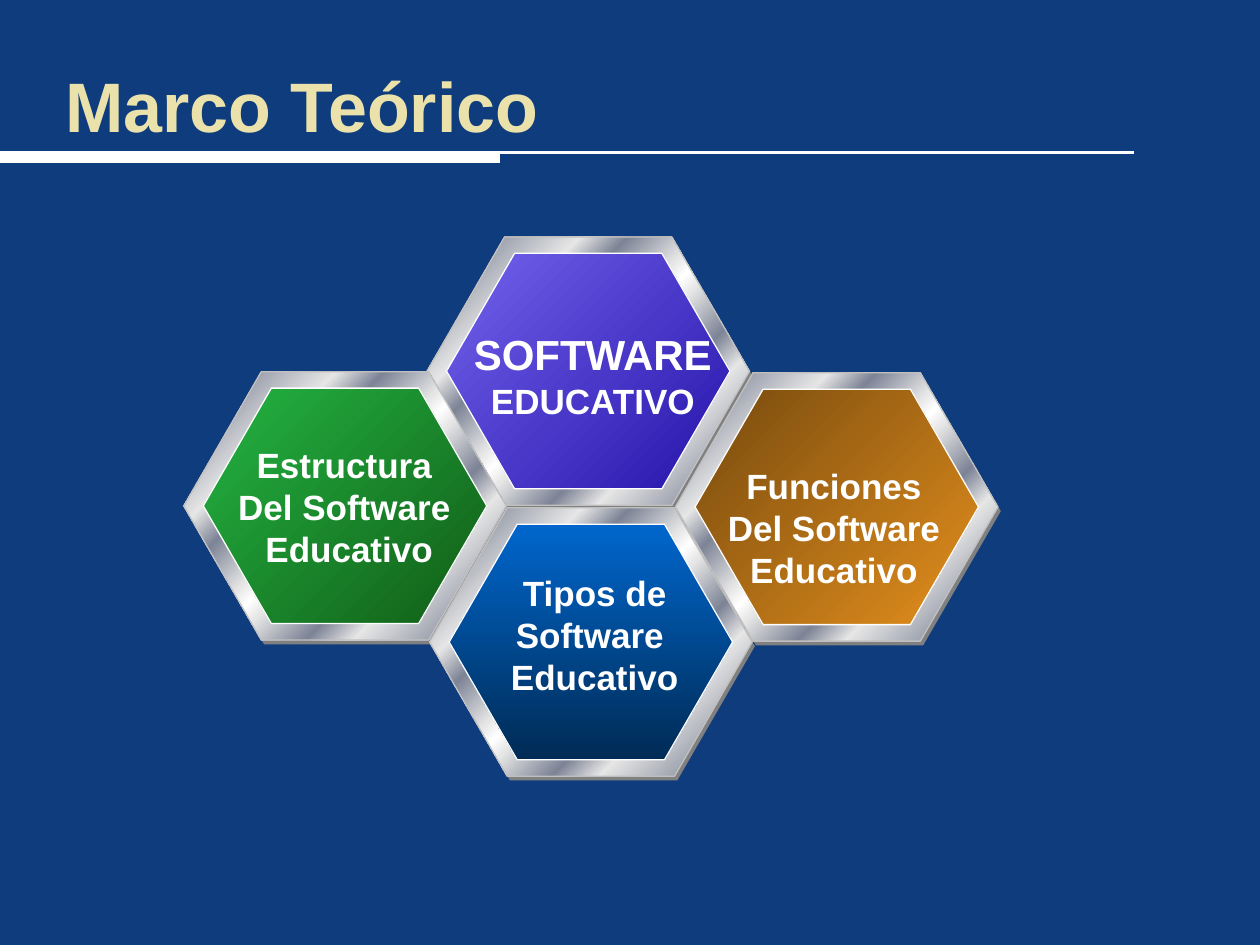
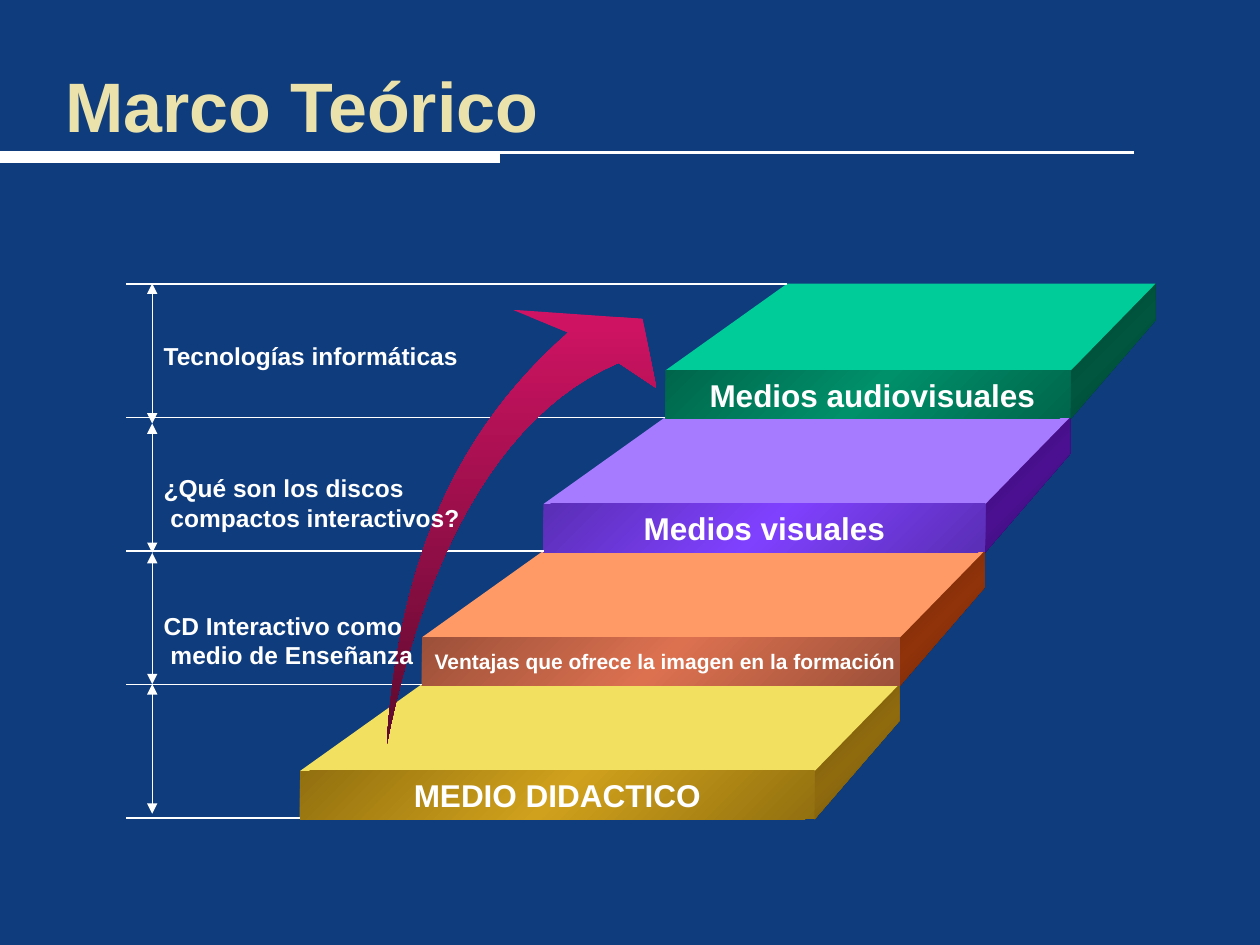
import pptx
import pptx.util
import pptx.dml.color
import pptx.enum.shapes
import pptx.enum.text
import pptx.oxml.ns
from lxml import etree

Pt = pptx.util.Pt
RGB = pptx.dml.color.RGBColor.from_string
qn = pptx.oxml.ns.qn
SHAPE = pptx.enum.shapes.MSO_SHAPE
ALIGN = pptx.enum.text.PP_ALIGN
ANCHOR = pptx.enum.text.MSO_ANCHOR

# ---- Content ----
TITLE = "Marco Teórico"
FONT = "Arial"
COLORS = {
    "background": "0F3C7D", "title": "EAE2AA", "white": "FFFFFF",
    "shadow": "808080", "rim": "C0C0C0",
}
CHROME = [(0, "E6E6E6"), (7, "7D8496"), (26, "E6E6E6"), (34, "7D8496"),
          (46, "E6E6E6"), (50, "FFFFFF"), (54, "E6E6E6"), (66, "7D8496"),
          (74, "E6E6E6"), (93, "7D8496"), (100, "E6E6E6")]

# Frame corner, gradient ends, gradient angle, text box, (line, size) pairs
HEXAGONS = [
    ((244, 135.4), ("7262EC", "2614AA"), 45, (262.8, 184.3, 152, 60.5),
     [("SOFTWARE", 24), ("EDUCATIVO", 20)]),
    ((105, 212.4), ("24B443", "115D16"), 45, (128.2, 249.8, 142.6, 80),
     [("Estructura ", 20), ("Del Software ", 20), ("Educativo", 20)]),
    ((386, 213), ("764A0E", "E48F1D"), 45, (408.2, 262, 136.8, 80),
     [("Funciones", 20), ("Del Software", 20), ("Educativo", 20)]),
    ((245.5, 290.2), ("0066CC", "002B55"), 90, (284.4, 323.3, 110.9, 80),
     [("Tipos de", 20), ("Software ", 20), ("Educativo", 20)]),
]

# From the lowest step up: text, size, left inset, top, front and side colours
STEPS = [
    ("MEDIO DIDACTICO", 18, 7.2, "F2E160", ("92700F", "D0A11C"), ("674D0A", "906B0E")),
    ("Ventajas que ofrece la imagen en la formación", 12, 12, "FF9966",
     ("9C5039", "DC7150"), ("672407", "90330A")),
    ("Medios visuales", 18, 7.2, "A77BFF", ("5A2EB5", "8041FF"), ("360B68", "4B1092")),
    ("Medios audiovisuales", 18, 12, "00CC99", ("00664B", "00906A"), ("003E2D", "00563F")),
]
LABELS = [
    (191.5, ["Tecnologías informáticas"]),
    (267, ["¿Qué son los discos", "compactos interactivos?"]),
    (345.6, ["CD Interactivo como", "medio de Enseñanza"]),
]
MEASURE_YS = [162, 242, 316, 391, 465]

# Curved arrow: Bezier control points of its two edges, and the head between
OUTER_EDGE = [(221, 425.5), (228, 317.5), (262.5, 245), (324.7, 190)]
ARROW_HEAD = [(293, 177), (367.2, 182.2), (375.1, 221.8)]
INNER_EDGE = [(353.5, 207.4), (282.2, 237.6), (241.2, 324.7), (221, 425.5)]
ARROW_STOPS = [(0, "D11364"), (100, "5C0A2D")]


# ---- Helpers ----
def box(x, y, w, h):
    return Pt(x), Pt(y), Pt(w), Pt(h)


def paint(sp, fill, angle=45, line=None):
    """Fill with one colour or with a list of gradient stops."""
    sp.shadow.inherit = False
    if isinstance(fill, str):
        sp.fill.solid()
        sp.fill.fore_color.rgb = RGB(fill)
    else:
        sp.fill.gradient()
        grad = sp._element.spPr.find(qn("a:gradFill"))
        for child in list(grad):
            grad.remove(child)
        stops = etree.SubElement(grad, qn("a:gsLst"))
        for pos, color in fill:
            gs = etree.SubElement(stops, qn("a:gs"), pos=str(pos * 1000))
            etree.SubElement(gs, qn("a:srgbClr"), val=color)
        etree.SubElement(grad, qn("a:lin"), ang=str(angle * 60000), scaled="1")
    if line:
        sp.line.color.rgb = RGB(line)
        sp.line.width = Pt(0.75)
    else:
        sp.line.fill.background()


def write(sp, lines, align, anchor=ANCHOR.TOP, hang=0):
    """Write bold white lines, the later ones indented by hang."""
    tf = sp.text_frame
    tf.word_wrap = False
    tf.vertical_anchor = anchor
    for i, (text, size) in enumerate(lines):
        p = tf.add_paragraph() if i else tf.paragraphs[0]
        p.text = text
        p.alignment = align
        p.line_spacing = Pt(size * 1.2)
        if i and hang:
            p._p.get_or_add_pPr().set("marL", str(Pt(hang)))
        p.font.name, p.font.size, p.font.bold = FONT, Pt(size), True
        p.font.color.rgb = RGB(COLORS["white"])


def add_line(s, x1, y1, x2, y2, width=0.75, arrows=False):
    c = s.shapes.add_connector(pptx.enum.shapes.MSO_CONNECTOR.STRAIGHT,
                               Pt(x1), Pt(y1), Pt(x2), Pt(y2))
    c.line.color.rgb = RGB(COLORS["white"])
    c.line.width = Pt(width)
    if arrows:
        for end in ("a:headEnd", "a:tailEnd"):
            etree.SubElement(c.line._get_or_add_ln(), qn(end), type="triangle")
    etree.SubElement(c._element.spPr, qn("a:effectLst"))


def add_outline(s, points, fill, angle=45):
    pts = [(Pt(x), Pt(y)) for x, y in points]
    fb = s.shapes.build_freeform(*pts[0], scale=1.0)
    fb.add_line_segments(pts[1:], close=True)
    paint(fb.convert_to_shape(), fill, angle)


def bezier(points, count=24):
    weights = [((1 - t) ** 3, 3 * t * (1 - t) ** 2, 3 * t * t * (1 - t), t ** 3)
               for t in (i / count for i in range(count + 1))]
    return [tuple(sum(w * p[axis] for w, p in zip(ws, points)) for axis in (0, 1))
            for ws in weights]


def add_titled_slide(prs):
    s = prs.slides.add_slide(prs.slide_layouts[5])
    add_line(s, 648, 87.1, 0, 87.1, 1.5)
    add_line(s, 0, 90, 285.8, 90, 6)
    sp = s.shapes.title
    sp.left, sp.top, sp.width, sp.height = box(30.2, 41.8, 642.2, 36)
    tf = sp.text_frame
    tf.auto_size = pptx.enum.text.MSO_AUTO_SIZE.NONE
    tf.vertical_anchor = ANCHOR.MIDDLE
    p = tf.paragraphs[0]
    p.text = TITLE
    p.alignment = ALIGN.LEFT
    p.font.name, p.font.size, p.font.bold = FONT, Pt(40), True
    p.font.color.rgb = RGB(COLORS["title"])
    return s


# ---- Slide 1: honeycomb ----
def build_honeycomb(prs):
    s = add_titled_slide(prs)
    frame_w, frame_h = 184.3, 153.4
    face_w, face_h = 162, 134.6

    def add_hexagon(x, y, w, h, fill, angle=45, line=None):
        sp = s.shapes.add_shape(SHAPE.HEXAGON, *box(x, y, w, h))
        sp.adjustments[0] = 0.289
        paint(sp, fill, angle, line)

    for (x, y), (start, end), angle, text_box, lines in HEXAGONS:
        add_hexagon(x + 1.6, y + 2.4, frame_w, frame_h, COLORS["shadow"])
        add_hexagon(x, y, frame_w, frame_h, CHROME, line=COLORS["rim"])
        add_hexagon(x + (frame_w - face_w) / 2, y + (frame_h - face_h) / 2,
                    face_w, face_h, [(0, start), (100, end)], angle, COLORS["white"])
        write(s.shapes.add_textbox(*box(*text_box)), lines, ALIGN.CENTER)


# ---- Slide 2: staircase ----
def build_staircase(prs):
    s = add_titled_slide(prs)
    left0, right0, top0, base0 = 171.4, 465.5, 440.6, 467.5
    left_step, right_step, rise = 69.6, 48.8, 76.3
    front_h, depth_y, depth_x, back_h = 27.5, 49.6, 48.4, 21

    # Steps: side, top and front faces
    for i, (text, size, inset, top_color, front, side) in enumerate(STEPS):
        left, right = left0 + i * left_step, right0 + i * right_step
        top = top0 - i * rise
        back_x, back_y = right + depth_x, top - depth_y
        add_outline(s, [(back_x, back_y + back_h), (right, top + front_h),
                        (right, top), (back_x, back_y)],
                    [(0, side[0]), (50, side[1]), (100, side[0])])
        add_outline(s, [(right, top), (left, top), (left + left_step, back_y),
                        (back_x, back_y)], top_color)
        sp = s.shapes.add_shape(SHAPE.RECTANGLE, *box(left, top, right - left, front_h))
        paint(sp, [(0, front[0]), (50, front[1]), (100, front[0])])
        sp.text_frame.margin_left = Pt(inset)
        write(sp, [(text, size)], ALIGN.CENTER, ANCHOR.MIDDLE)

    # Level lines and measuring arrows
    for i in range(len(STEPS) + 1):
        y = base0 - i * rise
        add_line(s, left0 + i * left_step, y, 72, y)
    for y1, y2 in zip(MEASURE_YS, MEASURE_YS[1:]):
        add_line(s, 87, y1, 87, y2, arrows=True)

    # Rising arrow and labels
    add_outline(s, bezier(OUTER_EDGE) + ARROW_HEAD + bezier(INNER_EDGE)[:-1],
                ARROW_STOPS, 90)
    for y, lines in LABELS:
        sp = s.shapes.add_textbox(*box(86.4, y, 184, 7.2 + 16.8 * len(lines)))
        write(sp, [(line, 14) for line in lines], ALIGN.LEFT, hang=3.9)


def main():
    prs = pptx.Presentation()
    prs.slide_width, prs.slide_height = Pt(720), Pt(540)
    fill = prs.slide_master.background.fill
    fill.solid()
    fill.fore_color.rgb = RGB(COLORS["background"])
    build_honeycomb(prs)
    build_staircase(prs)
    prs.save("out.pptx")


if __name__ == "__main__":
    main()
